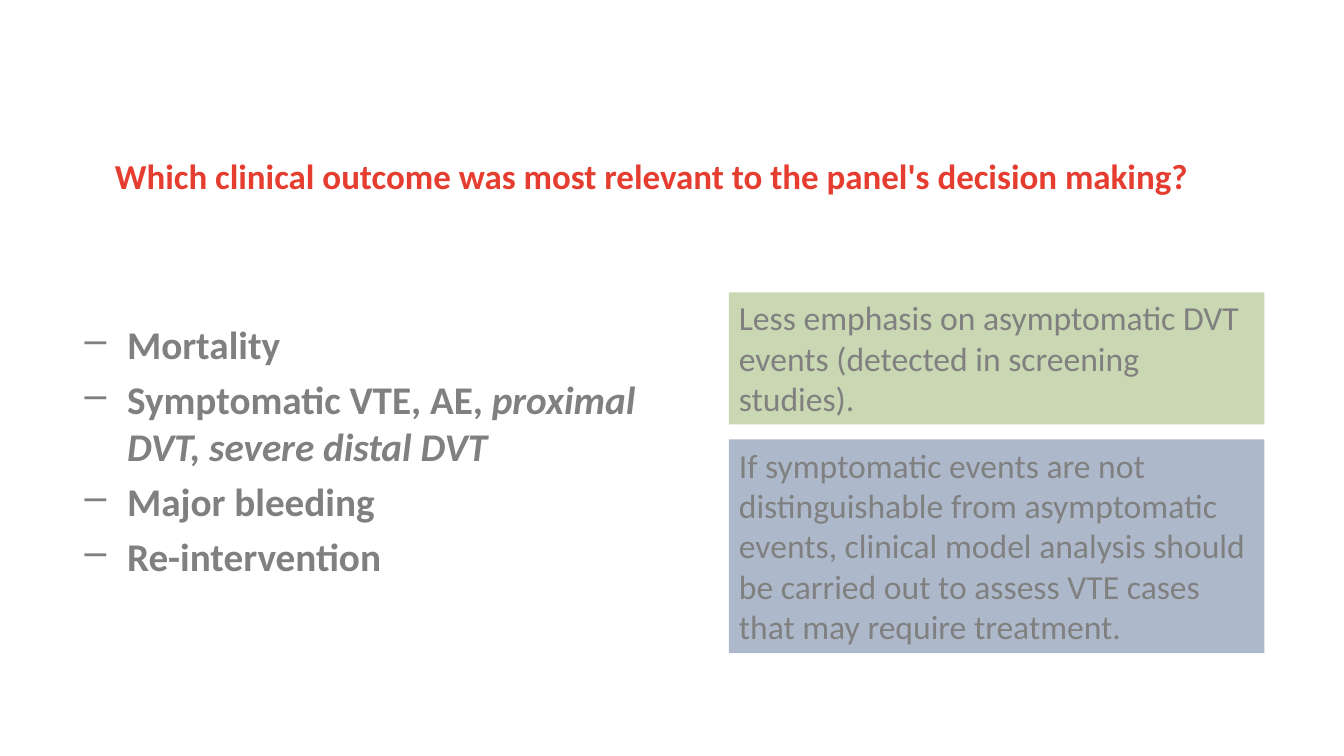
from lxml import etree
from pptx import Presentation
from pptx import util as u
from pptx.dml.color import RGBColor
from pptx.enum import shapes, text
from pptx.oxml.ns import qn

TITLE = "Which clinical outcome was most relevant to the panel's decision making?"
OUTCOMES = [
    [("Mortality", False)],
    [("Symptomatic VTE, AE, ", False), ("proximal DVT, severe distal DVT", True)],
    [("Major bleeding", False)],
    [("Re-intervention", False)],
]
NOTES = [
    ("Less emphasis on asymptomatic DVT events (detected in screening studies).",
     "green", 1.31),
    ("If symptomatic events are not distinguishable from asymptomatic events, "
     "clinical model analysis should be carried out to assess VTE cases that "
     "may require treatment.", "blue", 2.12),
]
THEME = {
    "font": "Calibri", "red": "E53E31", "gray": "808080",
    "green": "C9D7B2", "blue": "ADB9CA",
    "title": 25, "outcome": 28, "note": 24,
}
INDENT = u.Inches(0.42)
NOTE_LEFT, NOTE_TOP, NOTE_WIDTH, NOTE_GAP = 7.23, 2.9, 5.31, 0.15


def style(r, size, color, bold=False, italic=False):
    r.font.name = THEME["font"]
    r.font.size = u.Pt(THEME[size])
    r.font.color.rgb = RGBColor.from_string(THEME[color])
    r.font.bold = bold
    r.font.italic = italic


def add_text(s, left, top, width, height):
    tf = s.shapes.add_textbox(*map(u.Inches, (left, top, width, height))).text_frame
    tf.word_wrap = True
    return tf


def add_dash(p):
    pPr = p._p.get_or_add_pPr()
    pPr.set("marL", str(INDENT))
    pPr.set("indent", str(-INDENT))
    etree.SubElement(pPr, qn("a:buChar")).set("char", "–")


def add_title(s):
    tf = add_text(s, 0.46, 1.48, 12, 0.78)
    tf.text = TITLE
    p = tf.paragraphs[0]
    p.alignment = text.PP_ALIGN.CENTER
    style(p.runs[0], "title", "red", bold=True)


def add_outcomes(s):
    tf = add_text(s, 0.84, 3.18, 6.19, 3.21)
    tf.margin_left = tf.margin_right = tf.margin_top = tf.margin_bottom = 0
    for i, parts in enumerate(OUTCOMES):
        p = tf.add_paragraph() if i else tf.paragraphs[0]
        add_dash(p)
        if i:
            p.space_before = u.Pt(THEME["outcome"] * 0.2)
        for words, italic in parts:
            r = p.add_run()
            r.text = words
            style(r, "outcome", "gray", bold=True, italic=italic)


def add_notes(s):
    top = NOTE_TOP
    for words, fill, height in NOTES:
        sp = s.shapes.add_shape(
            shapes.MSO_SHAPE.RECTANGLE,
            *map(u.Inches, (NOTE_LEFT, top, NOTE_WIDTH, height)))
        sp.shadow.inherit = False
        sp.fill.solid()
        sp.fill.fore_color.rgb = RGBColor.from_string(THEME[fill])
        sp.line.fill.background()
        tf = sp.text_frame
        tf.word_wrap = True
        tf.vertical_anchor = text.MSO_ANCHOR.TOP
        tf.text = words
        p = tf.paragraphs[0]
        p.alignment = text.PP_ALIGN.LEFT
        style(p.runs[0], "note", "gray")
        top += height + NOTE_GAP


def main():
    prs = Presentation()
    prs.slide_width, prs.slide_height = u.Inches(13.33), u.Inches(7.5)
    s = prs.slides.add_slide(prs.slide_layouts[6])
    add_title(s)
    add_outcomes(s)
    add_notes(s)
    prs.save("out.pptx")


if __name__ == "__main__":
    main()
